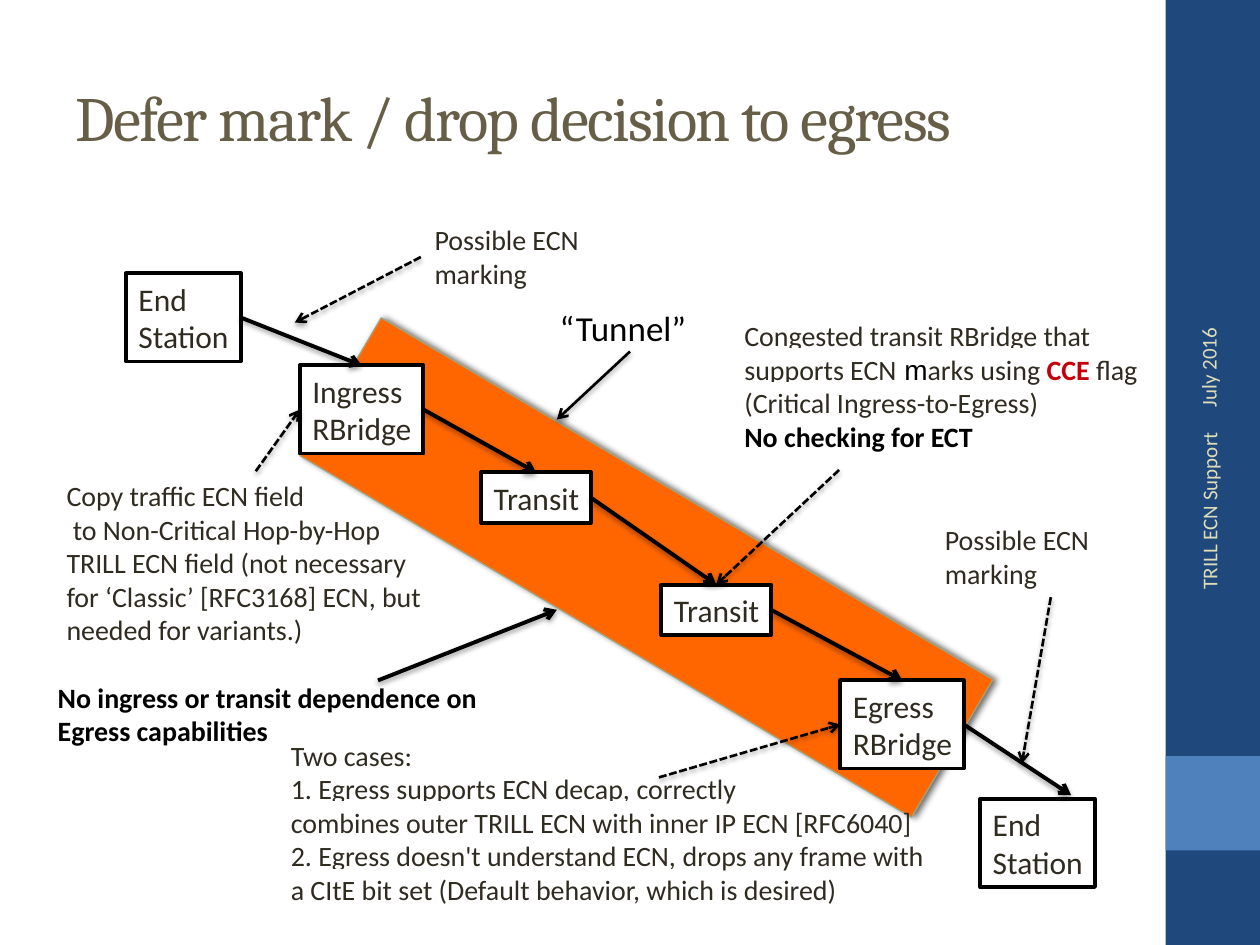
from dataclasses import dataclass
from typing import Optional

import lxml.etree
import pptx
import pptx.dml.color
import pptx.enum.dml
import pptx.enum.shapes
import pptx.enum.text
import pptx.oxml.ns
import pptx.util

Inches = pptx.util.Inches
Pt = pptx.util.Pt
ALIGN = pptx.enum.text.PP_ALIGN
ANCHOR = pptx.enum.text.MSO_ANCHOR
RECTANGLE = pptx.enum.shapes.MSO_SHAPE.RECTANGLE
TOP, LEFT, RIGHT = 0, 1, 3

COLORS = {
    "white": "FFFFFF", "black": "000000", "text": "2F2B20", "title": "675E47",
    "navy": "1F497D", "blue": "4F81BD", "side": "DFDCB7",
    "tunnel": "FF6600", "tunnel_edge": "A6A278", "flag": "C5000B",
}


@dataclass
class Run:
    text: str
    color: str = "text"
    size: float = 16
    font: str = "Calibri"
    bold: bool = False
    white_underline: bool = False
    spacing: Optional[float] = None


@dataclass
class Note:
    at: tuple[float, float, float, float]
    paragraphs: list[list[Run]]
    align: ALIGN = ALIGN.LEFT
    anchor: ANCHOR = ANCHOR.TOP
    rotation: float = 0


@dataclass
class Node:
    name: str
    at: tuple[float, float, float, float]
    lines: tuple[str, ...]
    fill: Optional[str] = "white"


@dataclass
class Arrow:
    start: tuple[float, float]
    end: tuple[float, float]
    width: float = 2.25
    dashed: bool = False
    source: Optional[tuple[str, int]] = None
    target: Optional[tuple[str, int]] = None


def rgb(name: str) -> pptx.dml.color.RGBColor:
    return pptx.dml.color.RGBColor.from_string(COLORS[name])


def sub(parent, tag: str, **attributes: str):
    return lxml.etree.SubElement(parent, pptx.oxml.ns.qn(tag), **attributes)


def add_shadow(shape, blur: float, distance: float, degrees: int, opacity: int) -> None:
    effects = sub(shape._element.spPr, "a:effectLst")
    shadow = sub(effects, "a:outerShdw", blurRad=str(Pt(blur)), dist=str(Pt(distance)),
                 dir=str(degrees * 60000), rotWithShape="0")
    color = sub(shadow, "a:srgbClr", val=COLORS["black"])
    sub(color, "a:alpha", val=str(opacity * 1000))


def write(frame, paragraphs: list[list[Run]], align: ALIGN = ALIGN.LEFT) -> None:
    for index, runs in enumerate(paragraphs):
        para = frame.paragraphs[0] if index == 0 else frame.add_paragraph()
        para.alignment = align
        for run in runs:
            span = para.add_run()
            span.text = run.text
            span.font.name = run.font
            span.font.size = Pt(run.size)
            span.font.bold = run.bold
            span.font.color.rgb = rgb(run.color)
            properties = span.font._element
            if run.spacing is not None:
                properties.set("spc", str(round(run.spacing * 100)))
            if run.white_underline:
                span.font.underline = True
                underline = lxml.etree.Element(pptx.oxml.ns.qn("a:uFill"))
                sub(sub(underline, "a:solidFill"), "a:srgbClr", val=COLORS["white"])
                properties.find(pptx.oxml.ns.qn("a:solidFill")).addnext(underline)


def add_rectangle(page, at: tuple[float, float, float, float], fill: Optional[str],
                  line: Optional[str] = None, width: float = 0.75):
    box = page.shapes.add_shape(RECTANGLE, *map(Inches, at))
    if fill:
        box.fill.solid()
        box.fill.fore_color.rgb = rgb(fill)
    else:
        box.fill.background()
    if line:
        box.line.color.rgb = rgb(line)
        box.line.width = Pt(width)
    else:
        box.line.fill.background()
    return box


def add_node(page, node: Node):
    box = add_rectangle(page, node.at, node.fill, "black", 2.25)
    box.shadow.inherit = False
    box.text_frame.word_wrap = False
    box.text_frame.vertical_anchor = ANCHOR.TOP
    write(box.text_frame, [[Run(line, size=18)] for line in node.lines])
    return box


def add_note(page, note: Note) -> None:
    box = page.shapes.add_textbox(*map(Inches, note.at))
    box.rotation = note.rotation
    box.text_frame.word_wrap = True
    box.text_frame.vertical_anchor = note.anchor
    write(box.text_frame, note.paragraphs, note.align)


def add_arrow(page, arrow: Arrow, boxes: dict) -> None:
    link = page.shapes.add_connector(pptx.enum.shapes.MSO_CONNECTOR.STRAIGHT,
                                     *map(Inches, arrow.start + arrow.end))
    if arrow.source:
        link.begin_connect(boxes[arrow.source[0]], arrow.source[1])
    if arrow.target:
        link.end_connect(boxes[arrow.target[0]], arrow.target[1])
    link.line.color.rgb = rgb("black")
    link.line.width = Pt(arrow.width)
    if arrow.dashed:
        link.line.dash_style = pptx.enum.dml.MSO_LINE.SQUARE_DOT
    sub(link.line._get_or_add_ln(), "a:tailEnd", type="arrow")
    add_shadow(link, 3.1, 1.6, 90, 38)


NODES = [
    Node("ingress", (2.38, 2.9, 0.98, 0.7), ("Ingress", "RBridge")),
    Node("egress", (6.67, 5.4, 0.98, 0.7), ("Egress", "RBridge")),
    Node("transit 1", (3.82, 3.75, 0.87, 0.4), ("Transit",)),
    Node("transit 2", (5.25, 4.64, 0.87, 0.4), ("Transit",)),
    Node("sender", (1, 2.17, 0.91, 0.7), ("End", "Station"), None),
    Node("receiver", (7.78, 6.34, 0.91, 0.7), ("End", "Station"), None),
]
HOPS = ["sender", "ingress", "transit 1", "transit 2", "egress"]
ARROWS = [Arrow((0, 0), (1, 1), source=(a, RIGHT), target=(b, TOP))
          for a, b in zip(HOPS, HOPS[1:])] + [
    Arrow((7.67, 5.76), (8.5, 6.31), source=("egress", RIGHT)),
    Arrow((3, 5.4), (4.42, 4.84)),
    Arrow((5, 2.79), (4.42, 3.33), 1.5),
    Arrow((3.34, 2.04), (2.34, 2.56), 1.5, True),
    Arrow((8.34, 4.74), (8.11, 6.06), 1.5, True),
    Arrow((2.03, 3.74), (2.37, 3.25), 1.5, True, target=("ingress", LEFT)),
    Arrow((5.23, 6.17), (6.66, 5.75), 1.5, True, target=("egress", LEFT)),
    Arrow((6.66, 3.73), (5.68, 4.64), 1.5, True, target=("transit 2", TOP)),
]
NOTES = [
    Note((0.5, 0.3, 8.33, 1.25), [[Run("Defer mark / drop decision to egress", "title", 36,
                                       "Cambria", spacing=-0.9)]], anchor=ANCHOR.MIDDLE),
    Note((8.26, 1.8, 2.66, 0.4), [[Run("July 2016", "side", 12)]],
         anchor=ANCHOR.MIDDLE, rotation=270),
    Note((8.3, 4.43, 2.59, 0.4), [[Run("TRILL ECN Support", "side", 12)]],
         ALIGN.RIGHT, ANCHOR.MIDDLE, 270),
    Note((3.35, 1.72, 1.88, 0.63), [[Run("Possible ECN marking")]]),
    Note((7.4, 4.1, 1.88, 0.63), [[Run("Possible ECN marking")]]),
    Note((0.43, 3.75, 3.2, 1.43), [[Run(line)] for line in (
        "Copy traffic ECN field", " to Non-Critical Hop-by-Hop",
        "TRILL ECN field (not necessary", "for ‘Classic’ [RFC3168] ECN, but",
        "needed for variants.)")]),
    Note((5.81, 2.48, 3.7, 1.23), [
        [Run("Congested transit RBridge that supports ECN", white_underline=True),
         Run(" m", "black", font="Arial"), Run("arks using "),
         Run("CCE ", "flag", bold=True), Run("flag (Critical Ingress-to-Egress)")],
        [Run("No checking for ECT", "black", bold=True)]]),
    Note((4.18, 2.38, 1.53, 0.5), [[Run("“Tunnel”", "black", 20)]], ALIGN.CENTER),
    Note((0.36, 5.35, 3.75, 0.7), [
        [Run("No ingress or transit dependence on Egress capabilities", "black", bold=True)]]),
    Note((2.21, 5.81, 5.29, 1.32), [
        [Run("Two cases:")],
        [Run("1. Egress supports ECN decap, ", white_underline=True), Run("correctly")],
        [Run("combines outer TRILL ECN with inner IP ECN [RFC6040]")],
        [Run("2. Egress doesn't understand ECN, ", white_underline=True),
         Run("drops any frame with a CItE bit set (Default behavior, which is desired)")]]),
]


def main() -> None:
    deck = pptx.Presentation()
    deck.slide_width, deck.slide_height = Inches(10), Inches(7.5)
    page = deck.slides.add_slide(deck.slide_layouts[6])

    # Side bar
    for at, fill in (((9.25, 0, 0.75, 7.5), "navy"), ((9.25, 6, 0.75, 0.75), "blue")):
        add_rectangle(page, at, fill).shadow.inherit = False

    # Tunnel behind the path
    tunnel = add_rectangle(page, (2.31, 3.87, 5.64, 1.27), "tunnel", "tunnel_edge")
    tunnel.rotation = 30.6
    add_shadow(tunnel, 4, 2, 0, 60)

    # Stations and bridges, then arrows and notes
    boxes = {node.name: add_node(page, node) for node in NODES}
    for arrow in ARROWS:
        add_arrow(page, arrow, boxes)
    for note in NOTES:
        add_note(page, note)
    deck.save("out.pptx")


if __name__ == "__main__":
    main()
